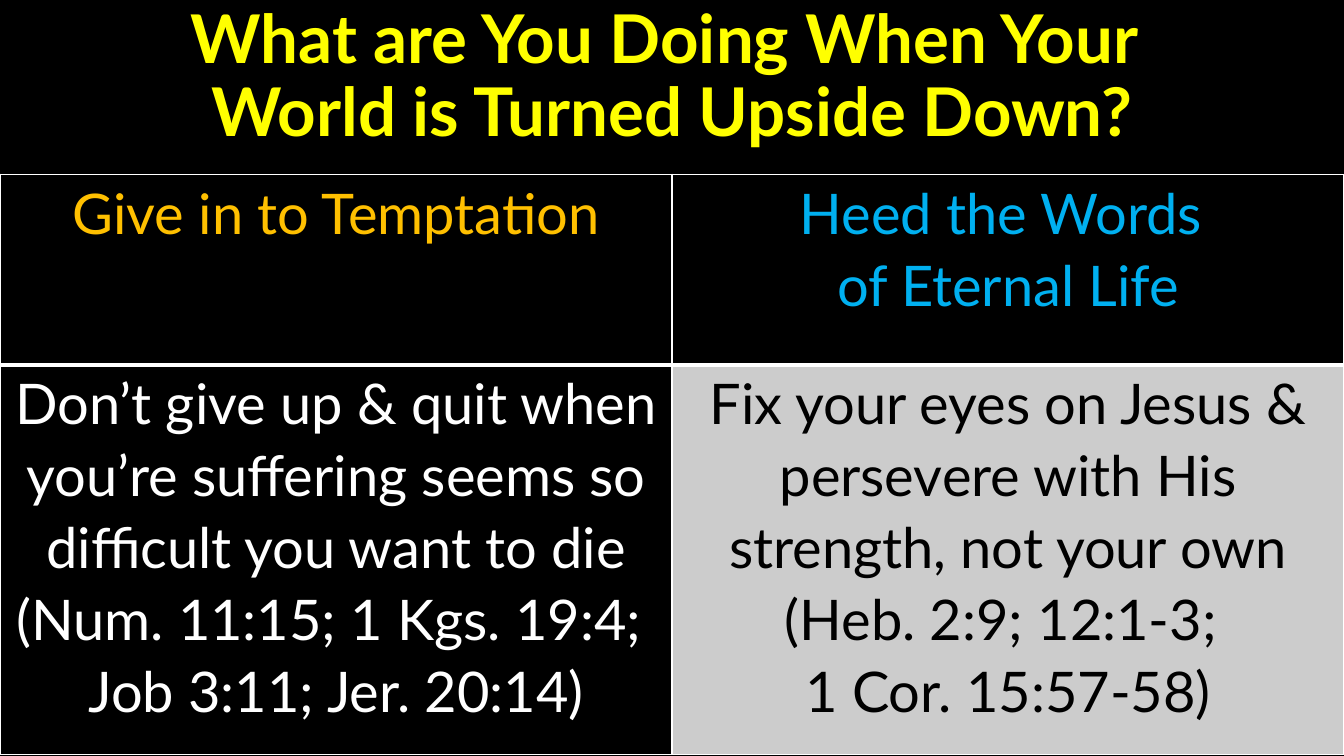
from dataclasses import dataclass

from lxml import etree
from pptx import Presentation
from pptx import util as u
from pptx.dml.color import RGBColor
from pptx.enum import text
from pptx.oxml import ns
from pptx.slide import Slide
from pptx.table import _Cell
from pptx.text.text import TextFrame

COLORS = {
    "black": "000000",
    "white": "FFFFFF",
    "yellow": "FFFF00",
    "orange": "FFC000",
    "blue": "00B0F0",
    "grey": "CCCCCC",
}
SLIDE_WIDTH = u.Cm(33.87)
SLIDE_HEIGHT = u.Cm(19.05)


@dataclass(frozen=True)
class Panel:
    lines: tuple[str, ...]
    color: str
    fill: str = "black"


@dataclass(frozen=True)
class Band:
    panels: tuple[Panel, ...]
    height: float
    bottom_border: float


BANDS = (
    Band(
        (
            Panel(("Give in to Temptation",), "orange"),
            Panel(("Heed the Words ", "of Eternal Life"), "blue"),
        ),
        height=4.8,
        bottom_border=3,
    ),
    Band(
        (
            Panel(
                (
                    "Don’t give up & quit when you’re suffering seems so difficult you want to die",
                    "(Num. 11:15; 1 Kgs. 19:4; ",
                    "Job 3:11; Jer. 20:14)",
                ),
                "white",
            ),
            Panel(
                (
                    "Fix your eyes on Jesus & persevere with His strength, not your own",
                    "(Heb. 2:9; 12:1-3; ",
                    "1 Cor. 15:57-58)",
                ),
                "black",
                "grey",
            ),
        ),
        height=9.83,
        bottom_border=1,
    ),
)


def rgb(name: str) -> RGBColor:
    return RGBColor.from_string(COLORS[name])


def write(frame: TextFrame, content: str, *, size: float, color: str,
          spacing: float, bold: bool = False) -> None:
    frame.word_wrap = True
    frame.text = content
    for paragraph in frame.paragraphs:
        paragraph.alignment = text.PP_ALIGN.CENTER
        paragraph.line_spacing = spacing
        paragraph.space_before = paragraph.space_after = u.Pt(0)
        for run in paragraph.runs:
            run.font.name = "Lato"
            run.font.size = u.Pt(size)
            run.font.bold = bold
            run.font.color.rgb = rgb(color)


def add_borders(cell: _Cell, bottom: float) -> None:
    properties = cell._tc.get_or_add_tcPr()
    for side, width in (("L", 1), ("R", 1), ("T", 1), ("B", bottom)):
        line = etree.SubElement(properties, ns.qn(f"a:ln{side}"), w=str(u.Pt(width)))
        fill = etree.SubElement(line, ns.qn("a:solidFill"))
        etree.SubElement(fill, ns.qn("a:srgbClr"), val=COLORS["white"])


def draw_title(slide: Slide) -> None:
    title = slide.shapes.title
    title.left, title.top = u.Cm(0), u.Cm(0)
    title.width, title.height = SLIDE_WIDTH, u.Cm(3.94)
    title.text_frame.auto_size = text.MSO_AUTO_SIZE.NONE
    title.text_frame.vertical_anchor = text.MSO_ANCHOR.MIDDLE
    write(title.text_frame, "What are You Doing When Your \vWorld is Turned Upside Down?",
          size=48, color="yellow", spacing=0.9, bold=True)


def draw_panel(cell: _Cell, panel: Panel, bottom_border: float) -> None:
    cell.margin_left = cell.margin_right = u.Cm(0.18)
    cell.margin_top = cell.margin_bottom = u.Cm(0)
    add_borders(cell, bottom_border)
    cell.fill.solid()
    cell.fill.fore_color.rgb = rgb(panel.fill)
    write(cell.text_frame, "\n".join(panel.lines), size=40, color=panel.color, spacing=1.07)


def draw_comparison(slide: Slide) -> None:
    height = u.Cm(sum(band.height for band in BANDS))
    comparison = slide.shapes.add_table(
        len(BANDS), len(BANDS[0].panels), u.Cm(0), u.Cm(4.39), SLIDE_WIDTH, height
    ).table
    comparison.first_row = comparison.horz_banding = False
    for row, band in zip(comparison.rows, BANDS):
        row.height = u.Cm(band.height)
        for cell, panel in zip(row.cells, band.panels):
            draw_panel(cell, panel, band.bottom_border)


def main() -> None:
    deck = Presentation()
    deck.slide_width, deck.slide_height = SLIDE_WIDTH, SLIDE_HEIGHT
    slide = deck.slides.add_slide(deck.slide_layouts.get_by_name("Title Only"))
    slide.background.fill.solid()
    slide.background.fill.fore_color.rgb = rgb("black")
    draw_title(slide)
    draw_comparison(slide)
    deck.save("out.pptx")


if __name__ == "__main__":
    main()
